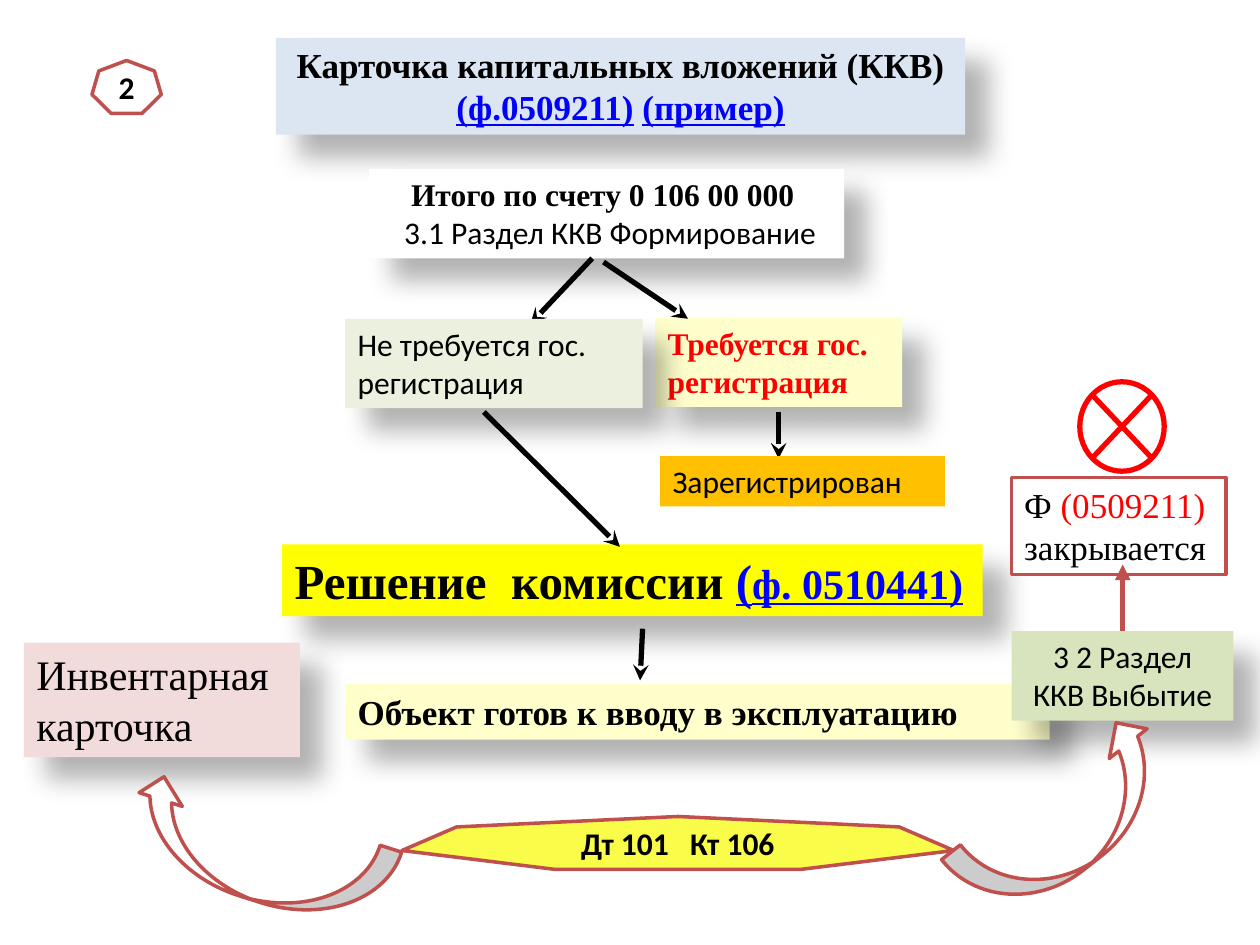
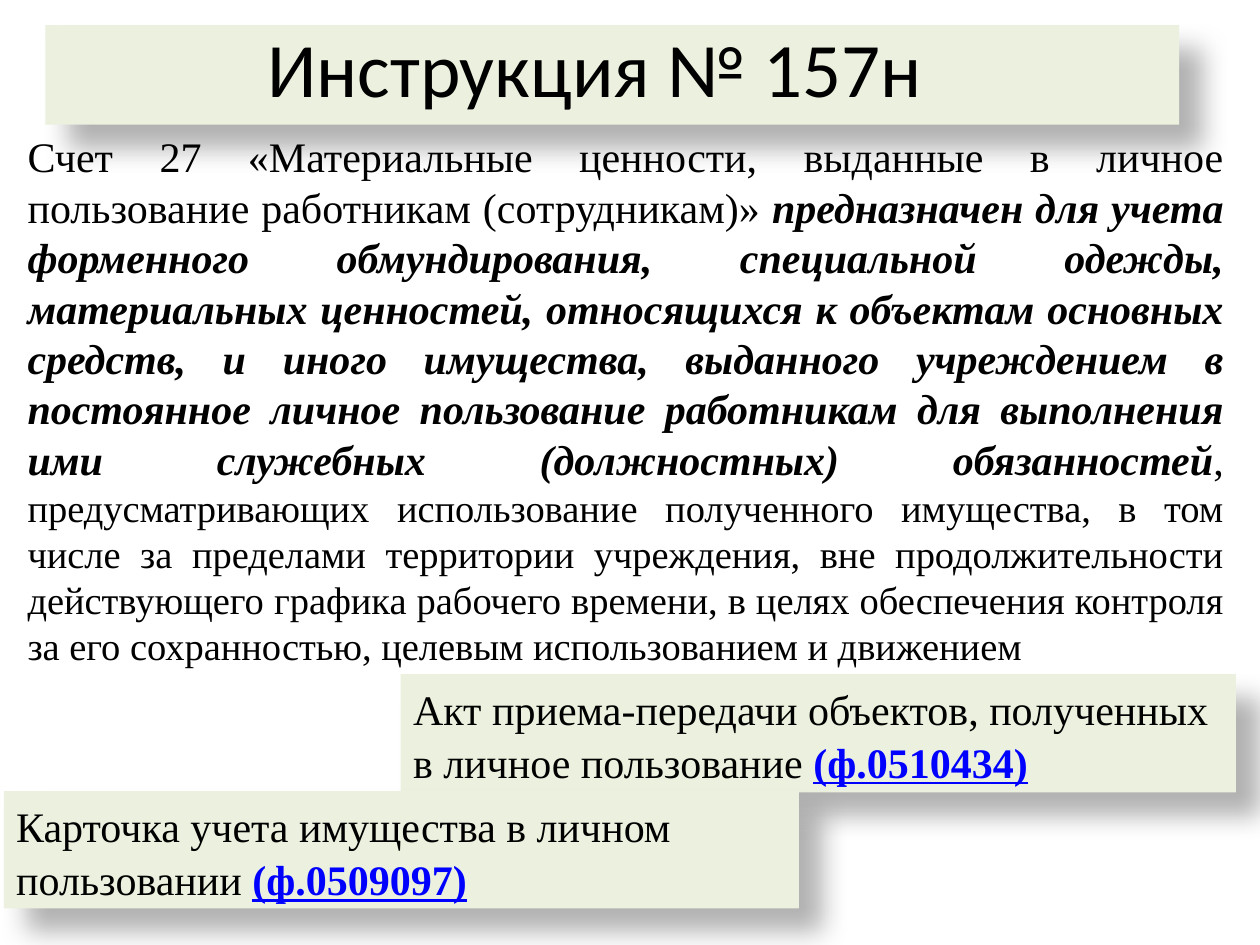
"""Builds two slides on capital investment cards and account 27."""
import dataclasses

import pptx
import pptx.dml.color
import pptx.enum.shapes
import pptx.enum.text
import pptx.oxml.ns
import pptx.util
from lxml import etree

PX = 9144


@dataclasses.dataclass(frozen=True)
class Theme:
    serif: str = "Times New Roman"
    sans: str = "Calibri"
    black: str = "000000"
    white: str = "FFFFFF"
    red: str = "FF0000"
    link: str = "0000FF"
    accent: str = "C0504D"
    ice: str = "DCE6F2"
    yellow: str = "FFFF00"
    lemon: str = "F9FD49"
    cream: str = "FFFFCC"
    green: str = "D7E4BD"
    pale: str = "EBF1DE"
    rose: str = "F2DCDB"
    orange: str = "FFC000"
    small: int = 18
    medium: int = 20
    body: int = 22
    large: int = 24
    heading: int = 28
    title: int = 44


T = Theme()
MSO = pptx.enum.shapes.MSO_SHAPE
AL = pptx.enum.text.PP_ALIGN
ANCHOR = pptx.enum.text.MSO_ANCHOR
FIT = pptx.enum.text.MSO_AUTO_SIZE
RGB = pptx.dml.color.RGBColor.from_string
qn = pptx.oxml.ns.qn
SOFT = (30, 15, 18, 45)


def box(s, kind, at, fill=None, paras=(), line=None, shadow=None, align=AL.LEFT,
        anchor=ANCHOR.TOP, fit=FIT.SHAPE_TO_FIT_TEXT, wrap=True, spacing=None, after=None):
    """Add a box; each paragraph is a list of (text, size, font, colour, flags) runs."""
    place = [v * PX for v in at]
    if kind is None:
        sp = s.shapes.add_textbox(*place)
    else:
        sp = s.shapes.add_shape(kind, *place)
        sp.shadow.inherit = False
        sp.fill.solid()
        sp.fill.fore_color.rgb = RGB(fill)
        if line:
            sp.line.color.rgb = RGB(line[0])
            sp.line.width = pptx.util.Pt(line[1])
        else:
            sp.line.fill.background()
    if shadow:
        alpha, blur, dist, angle = shadow
        effects = sp._element.spPr.find(qn("a:effectLst"))
        outer = etree.SubElement(effects, qn("a:outerShdw"), blurRad=str(blur * 12700),
                                 dist=str(dist * 12700), dir=str(angle * 60000),
                                 algn="ctr", rotWithShape="0")
        color = etree.SubElement(outer, qn("a:srgbClr"), val=T.black)
        etree.SubElement(color, qn("a:alpha"), val=str(alpha * 1000))
    if not paras:
        return sp
    tf = sp.text_frame
    tf.word_wrap = wrap
    tf.vertical_anchor = anchor
    tf.auto_size = fit
    for i, runs in enumerate(paras):
        p = tf.add_paragraph() if i else tf.paragraphs[0]
        p.alignment = align
        if spacing:
            p.line_spacing = spacing
        if after:
            p.space_after = pptx.util.Pt(after)
        for text, size, font, color, flags in runs:
            r = p.add_run()
            r.text = text
            r.font.size = pptx.util.Pt(size)
            r.font.name = font
            r.font.color.rgb = RGB(color)
            r.font.bold = "b" in flags
            r.font.italic = "i" in flags
            r.font.underline = "u" in flags
    return sp


def arrow(s, x1, y1, x2, y2, color=T.black, head="stealth"):
    """Add a straight arrow from the first point to the second."""
    c = s.shapes.add_connector(pptx.enum.shapes.MSO_CONNECTOR.STRAIGHT,
                               x1 * PX, y1 * PX, x2 * PX, y2 * PX)
    c.line.color.rgb = RGB(color)
    c.line.width = pptx.util.Pt(3)
    etree.SubElement(c.line._get_or_add_ln(), qn("a:tailEnd"), type=head)
    etree.SubElement(c._element.spPr, qn("a:effectLst"))
    return c


prs = pptx.Presentation()
prs.slide_width = 1000 * PX
prs.slide_height = 750 * PX
blank = prs.slide_layouts[6]

s = prs.slides.add_slide(blank)
box(s, MSO.RECTANGLE, (219, 30, 547, 77), T.ice, [
    [("Карточка капитальных вложений (ККВ)", T.medium, T.serif, T.black, "b")],
    [("(ф.0509211)", T.medium, T.serif, T.link, "bu"),
     (" ", T.medium, T.serif, T.red, "b"),
     ("(пример)", T.medium, T.serif, T.link, "bu")],
], shadow=SOFT, align=AL.CENTER)
box(s, MSO.RECTANGLE, (293, 134, 377, 71), T.white, [
    [("Итого по счету 0 106 00 000 ", T.small, T.serif, T.black, "b")],
    [(" 3.1 Раздел ККВ Формирование", T.small, T.sans, T.black, "")],
], shadow=SOFT, align=AL.CENTER)
box(s, MSO.RECTANGLE, (224, 432, 556, 57), T.yellow, [
    [("Решение  комиссии ", T.heading, T.serif, T.black, "b"),
     ("(", T.heading, T.serif, T.link, "bu"),
     ("ф. 0510441)", T.large, T.serif, T.link, "bu")],
], shadow=SOFT, wrap=False)
arrow(s, 470, 205, 421, 257)
arrow(s, 618, 327, 618, 364)
box(s, MSO.RECTANGLE, (274, 543, 559, 44), T.cream, [
    [("Объект готов к вводу в эксплуатацию", T.medium, T.serif, T.black, "b")],
], shadow=SOFT)
arrow(s, 510, 499, 508, 540)
disposal = box(s, MSO.RECTANGLE, (803, 501, 176, 71), T.green, [
    [("3 2 Раздел ККВ Выбытие", T.small, T.sans, T.black, "")],
], shadow=SOFT, align=AL.CENTER)
box(s, MSO.RECTANGLE, (520, 252, 196, 71), T.cream, [
    [("Требуется гос. регистрация", T.small, T.serif, T.red, "b")],
], shadow=SOFT)
box(s, MSO.RECTANGLE, (274, 253, 236, 71), T.pale, [
    [("Не требуется гос. регистрация", T.small, T.sans, T.black, "")],
], shadow=SOFT)
arrow(s, 479, 208, 546, 253)
box(s, MSO.RECTANGLE, (19, 510, 219, 91), T.rose, [
    [("Инвентарная карточка", T.large, T.serif, T.black, "")],
], shadow=SOFT)
arrow(s, 384, 327, 492, 434)
box(s, MSO.RECTANGLE, (524, 362, 226, 40), T.orange, [
    [("Зарегистрирован", T.small, T.sans, T.black, "")],
])

outline = (T.accent, 2)
for at, fill, text in [((73, 48, 55, 42), T.white, "2"),
                       ((319, 648, 438, 42), T.lemon, "Дт 101   Кт 106")]:
    box(s, MSO.HEPTAGON, at, fill, [[(text, T.small, T.sans, T.black, "b")]],
        line=outline, align=AL.CENTER, anchor=ANCHOR.MIDDLE, fit=FIT.NONE)
for kind, at, angle in [(MSO.CURVED_UP_ARROW, (750, 614, 195, 76), 321.9),
                        (MSO.CURVED_DOWN_ARROW, (97, 642, 216, 72), 197.6)]:
    box(s, kind, at, T.white, line=outline).rotation = angle
box(s, MSO.FLOWCHART_SUMMING_JUNCTION, (857, 303, 67, 71), T.white, line=(T.red, 3))
box(s, MSO.RECTANGLE, (803, 379, 170, 77), T.white, [
    [("Ф ", T.medium, T.serif, T.black, ""),
     ("(0509211) ", T.medium, T.serif, T.red, ""),
     ("закрывается", T.medium, T.serif, T.black, "")],
], line=outline)
closing = arrow(s, 891, 501, 891, 448, T.accent, "triangle")
closing.begin_connect(disposal, 0)

s = prs.slides.add_slide(blank)
box(s, None, (12, 99, 969, 441), paras=[[
    ("Счет 27 «Материальные ценности, выданные в личное пользование работникам "
     "(сотрудникам)» ", T.large, T.serif, T.black, ""),
    ("предназначен для учета форменного обмундирования, специальной одежды, "
     "материальных ценностей, относящихся к объектам основных средств, и иного "
     "имущества, выданного учреждением в постоянное личное пользование работникам "
     "для выполнения ими служебных (должностных) обязанностей",
     T.large, T.serif, T.black, "bi"),
    (", ", T.large, T.serif, T.black, ""),
    ("предусматривающих использование полученного имущества, в том числе за пределами "
     "территории учреждения, вне продолжительности действующего графика рабочего "
     "времени, в целях обеспечения контроля за его сохранностью, целевым "
     "использованием и движением", T.body, T.serif, T.black, ""),
]], align=AL.JUSTIFY)
title = box(s, MSO.RECTANGLE, (36, 20, 900, 79), T.pale, [
    [("Инструкция № 157н", T.title, T.sans, T.black, "")],
], shadow=SOFT, align=AL.CENTER, fit=FIT.NONE, spacing=0.9)
title.text_frame.margin_right = 37 * PX
for at, text, form in [
    ((318, 535, 663, 94), "Акт приема-передачи объектов, полученных в личное пользование ",
     "(ф.0510434)"),
    ((3, 628, 631, 93), "Карточка учета имущества в личном пользовании ", "(ф.0509097)"),
]:
    box(s, MSO.RECTANGLE, at, T.pale, [
        [(text, T.large, T.serif, T.black, ""), (form, T.large, T.serif, T.link, "bu")],
    ], shadow=SOFT, spacing=1.06, after=8)

prs.save("out.pptx")
